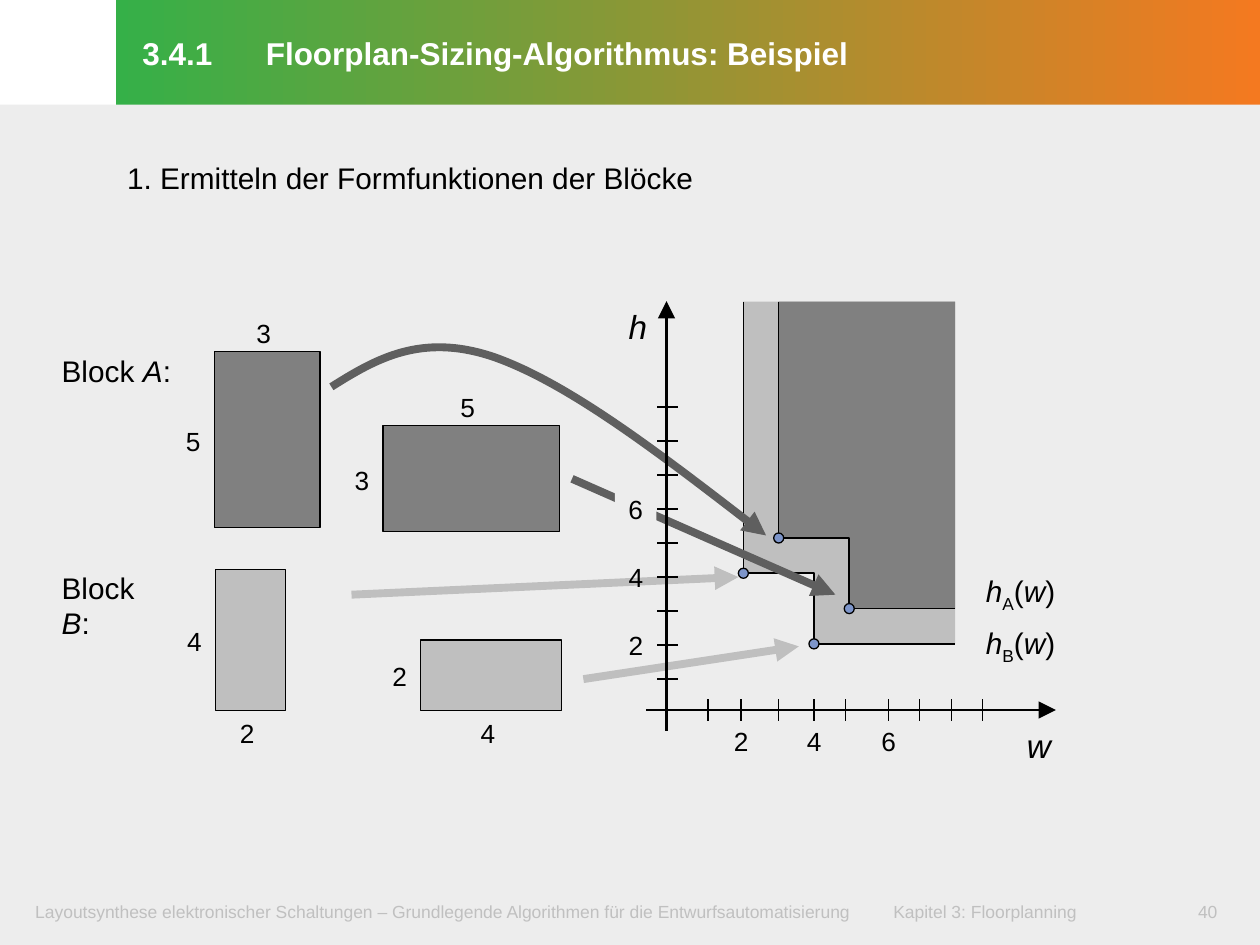
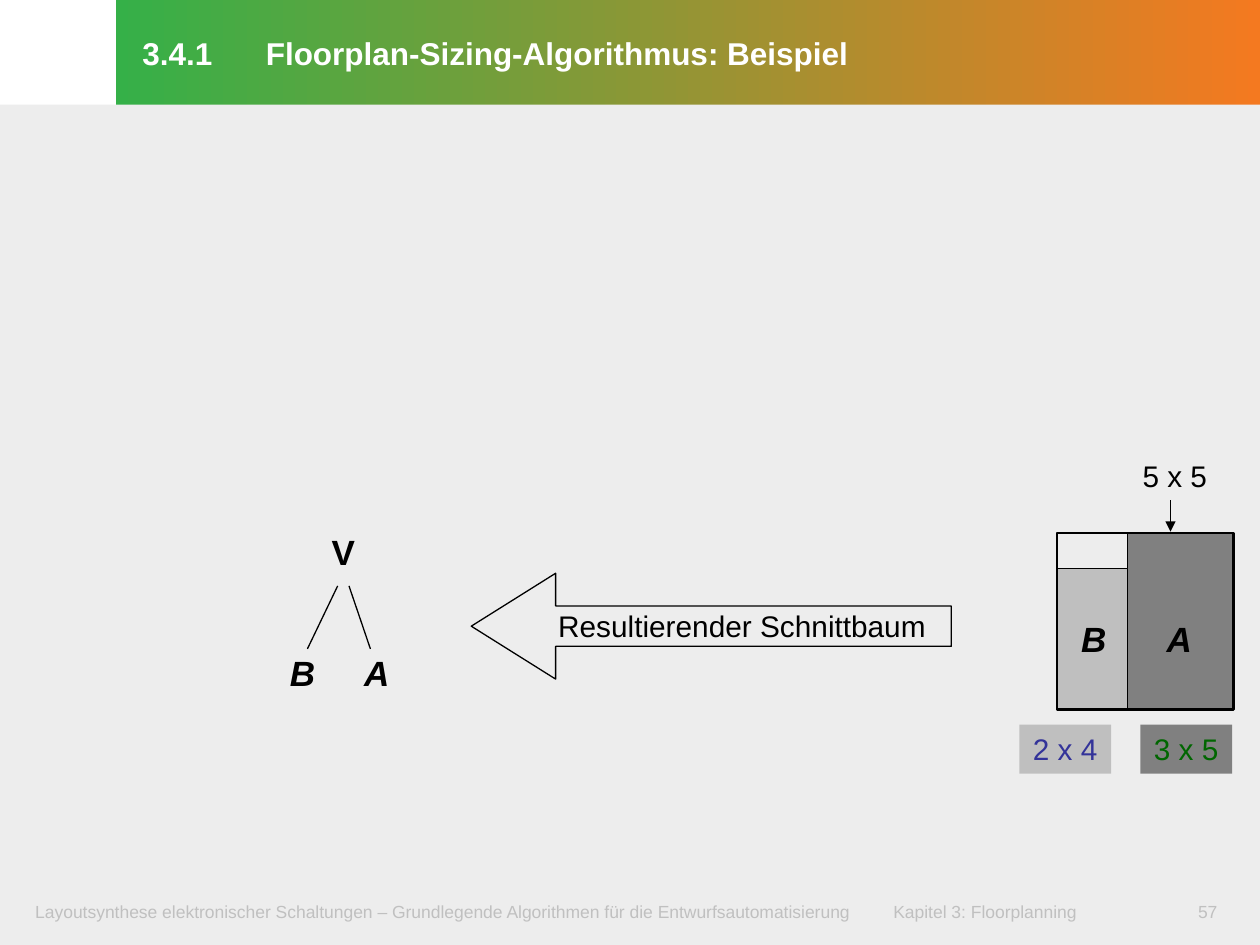
from dataclasses import dataclass
from typing import Any

from lxml import etree
from pptx import Presentation
from pptx import util as u
from pptx.dml.color import RGBColor
from pptx.enum import shapes, text
from pptx.oxml.ns import qn

COLORS = {
    "paper": "EDEDED", "footer": "C0C0C0", "white": "FFFFFF", "black": "000000",
    "green": "35B048", "orange": "F47920", "A": "808080", "B": "BFBFBF",
    "arrow_A": "5F5F5F", "dot": "7D95CA", "size_A": "006600", "size_B": "333399",
}
FONT = "Arial"
COLS, ROWS = 100, 75          # slide grid, square cells
UNIT = 2.8                    # grid cells per length unit of a block
DIGIT_W, DIGIT_H = 3.3, 3.5
TITLE = "3.4.1\tFloorplan-Sizing-Algorithmus: Beispiel"
BOOK = ("Layoutsynthese elektronischer Schaltungen – Grundlegende Algorithmen "
        "für die Entwurfsautomatisierung")
CHAPTER = "Kapitel 3: Floorplanning"

prs = Presentation()
prs.slide_width, prs.slide_height = u.Inches(10), u.Inches(7.5)
CELL = prs.slide_width / COLS


def grid(*lengths):
    return [u.Emu(round(v * CELL)) for v in lengths]


def rgb(name):
    return RGBColor.from_string(COLORS[name])


def style(sp, fill=None, line=None, width=0.63):
    sp.shadow.inherit = False
    if fill:
        sp.fill.solid()
        sp.fill.fore_color.rgb = rgb(fill)
    else:
        sp.fill.background()
    if line:
        stroke(sp, line, width)
    else:
        sp.line.fill.background()


def stroke(sp, color, width, arrow=None):
    """Colour a line; arrow is the head's size, med or lg."""
    sp.line.color.rgb = rgb(color)
    sp.line.width = u.Pt(width)
    if arrow:
        ln = sp.line._get_or_add_ln()
        etree.SubElement(ln, qn("a:tailEnd"), type="triangle", w=arrow, len=arrow)


def write(tf, runs, size, color="black", align="CENTER", wrap=False, inset=(1.1, 0.5)):
    """Fill a frame with (text, flags) runs; flags are b, i and s (subscript)."""
    tf.word_wrap = wrap
    tf.vertical_anchor = text.MSO_ANCHOR.TOP
    tf.margin_left, tf.margin_top = tf.margin_right, tf.margin_bottom = grid(*inset)
    p = tf.paragraphs[0]
    p.alignment = getattr(text.PP_ALIGN, align)
    for words, flags in [(runs, "")] if isinstance(runs, str) else runs:
        r = p.add_run()
        r.text = words
        r.font.name, r.font.size = FONT, u.Pt(size)
        r.font.color.rgb = rgb(color)
        r.font.bold, r.font.italic = "b" in flags, "i" in flags
        if "s" in flags:
            r._r.get_or_add_rPr().set("baseline", "-25000")


@dataclass
class Region:
    """Part of a slide; all positions are grid cells from its corner."""
    s: Any
    left: float = 0
    top: float = 0

    def shape(self, x, y, w, h, fill=None, line=None, width=0.63, kind="RECTANGLE"):
        sp = self.s.shapes.add_shape(getattr(shapes.MSO_SHAPE, kind),
                                     *grid(self.left + x, self.top + y, w, h))
        style(sp, fill, line, width)
        return sp

    def label(self, x, y, w, h, runs, size, fill=None, **options):
        if fill:
            sp = self.shape(x, y, w, h, fill)
        else:
            sp = self.s.shapes.add_textbox(*grid(self.left + x, self.top + y, w, h))
        write(sp.text_frame, runs, size, **options)

    def digit(self, x, y, value, fill=None):
        """Number centred on a point."""
        self.label(x - DIGIT_W / 2, y - DIGIT_H / 2, DIGIT_W, DIGIT_H, str(value), 15, fill)

    def line(self, x1, y1, x2, y2, color="black", width=0.75, arrow=None):
        sp = self.s.shapes.add_connector(
            shapes.MSO_CONNECTOR.STRAIGHT,
            *grid(self.left + x1, self.top + y1, self.left + x2, self.top + y2))
        stroke(sp, color, width, arrow)
        etree.SubElement(sp._element.spPr, qn("a:effectLst"))

    def outline(self, points, closed=False, **look):
        pts = [grid(self.left + x, self.top + y) for x, y in points]
        builder = self.s.shapes.build_freeform(*pts[0], scale=1.0)
        builder.add_line_segments(pts[1:], close=closed)
        sp = builder.convert_to_shape()
        style(sp, **look)
        return sp

    def curve(self, points, color, width):
        """Bezier arrow: a start point, then triples of control, control, end."""
        sp = self.outline(points)
        stroke(sp, color, width, "med")
        steps = list(sp._element.iter(qn("a:lnTo")))
        for i in range(0, len(steps), 3):
            bezier = etree.Element(qn("a:cubicBezTo"))
            steps[i].addprevious(bezier)
            for step in steps[i:i + 3]:
                bezier.append(step[0])
                step.getparent().remove(step)


def base_slide(number):
    s = prs.slides.add_slide(prs.slide_layouts[5])
    page = Region(s)
    page.shape(0, 8.3, COLS, ROWS - 8.3, "paper")
    for x, w, words, align in ((1.6, 68, BOOK, "LEFT"), (69.7, 20, CHAPTER, "LEFT"),
                               (92.9, 5.9, str(number), "CENTER")):
        page.label(x, 70.9, w, 3.2, words, 10, color="footer", align=align,
                   inset=(1.2, 0.6))
    title_band(s.shapes.title)
    return s


def title_band(sp):
    sp.left, sp.top, sp.width, sp.height = grid(9.2, 0, 90.8, 8.3)
    sp.fill.gradient()
    sp.fill.gradient_angle = 0
    for stop, name, position in zip(sp.fill.gradient_stops, ("green", "orange"), (0, 1)):
        stop.color.rgb, stop.position = rgb(name), position
    tf = sp.text_frame
    tf.auto_size = text.MSO_AUTO_SIZE.NONE
    p = tf.paragraphs[0]
    p.line_spacing = u.Pt(23.5)
    tabs = etree.SubElement(p._p.get_or_add_pPr(), qn("a:tabLst"))
    etree.SubElement(tabs, qn("a:tab"), pos=str(grid(9.8)[0]), algn="l")
    write(tf, [(TITLE, "b")], 18, "white", "LEFT", True)
    tf.vertical_anchor = text.MSO_ANCHOR.MIDDLE
    tf.margin_left, tf.margin_right, tf.margin_bottom = grid(2.1, 1, 0.7)


def block_variants(reg, name, name_box, variants, width_above):
    """Both orientations of a block, each with its width and height."""
    reg.label(*name_box, 3.9, [("Block ", ""), (name, "i"), (":", "")], 17,
              align="LEFT", wrap=True)
    for x, y, w, h in variants:
        reg.shape(x, y, w * UNIT, h * UNIT, name, "black")
        width_y = y - 1.45 if width_above else y + h * UNIT + 1.8
        reg.digit(x + w * UNIT / 2 - 0.3, width_y, w)
        reg.digit(x - 1.7, y + h * UNIT / 2 + 0.1, h)


def plot_point(w, h):
    return 4.6 + w * UNIT, 32.9 - h * UNIT


def shape_function(reg, name, corners):
    """Area above a staircase through two (w, h) corners, and its edge."""
    (w1, h1), (w2, h2) = corners
    right, top = 8, 11.7
    edge = [plot_point(*c) for c in ((w1, top), (w1, h1), (w2, h1), (w2, h2), (right, h2))]
    reg.outline(edge + [plot_point(right, top)], closed=True, fill=name)
    reg.outline(edge, line="black", width=1)


def corner_dots(reg, corners):
    for x, y in (plot_point(*c) for c in corners):
        reg.shape(x - 0.4, y - 0.4, 0.8, 0.8, "dot", "black", 0.75, "OVAL")


def axes(reg):
    w_ticks = [7.4, 10, 13, 15.8, 18.3, 21.7, 24.2, 26.7, 29.2]
    h_ticks = [32.8 - 2.7 * n for n in range(1, 10)]
    reg.line(4.1, 34.2, 4.1, 0.1, width=1.63, arrow="lg")
    reg.line(2.5, 32.55, 35, 32.55, width=1.63, arrow="lg")
    for x in w_ticks:
        reg.line(x, 31.7, x, 33.4)
    for y in h_ticks:
        reg.line(3.35, y, 5.05, y)
    for n in (2, 4, 6):
        reg.digit(w_ticks[n - 1], 35.05, n)
        reg.digit(1.65, h_ticks[n - 1], n, "paper" if n == 6 else None)
    reg.label(0, 0, 3.6, 4.3, [("h", "i")], 19)
    reg.label(31.6, 33.3, 4, 4.2, [("w", "i")], 19)
    for name, y in (("A", 21.2), ("B", 25.3)):
        reg.label(27.2, y, 10, 3.9,
                  [("h", "i"), (name, "s"), ("(", ""), ("w", "i"), (")", "")], 17)


def block_arrows(page):
    page.line(46.3, 53.9, 63.4, 51.3, "B", 4.5, "med")
    page.line(27.9, 47.2, 58.6, 45.8, "B", 4.5, "med")
    page.curve([(26.3, 30.7), (29.8, 28.5), (33.4, 26.4), (39.1, 28.3),
                (44.9, 30.3), (52.8, 36.3), (60.8, 42.5)], "arrow_A", 4.5)
    page.line(45.4, 38, 66.3, 47.2, "arrow_A", 4.5, "med")


def shape_functions_slide():
    s = base_slide(40)
    page, plot = Region(s), Region(s, 48.8, 23.8)
    corners = {"B": [(2, 4), (4, 2)], "A": [(3, 5), (5, 3)]}
    page.label(9.1, 12.2, 54.2, 3.8, "1. Ermitteln der Formfunktionen der Blöcke", 17,
               align="LEFT", wrap=True, inset=(1, 0.5))
    for name in corners:
        shape_function(plot, name, corners[name])
    block_arrows(page)
    corner_dots(plot, corners["A"] + corners["B"])
    axes(plot)
    block_variants(Region(s, 3.8, 24.7), "A", (0, 2.8, 11.4),
                   [(13.2, 3.2, 3, 5), (26.6, 9.1, 5, 3)], True)
    block_variants(Region(s, 3.8, 44.7), "B", (0, 0, 10.7),
                   [(13.3, 0.5, 2, 4), (29.6, 6.1, 4, 2)], False)


def letter(reg, x, y, name, flags="bi"):
    reg.label(x, y, 4.1, 4.4, [(name, flags)], 20)


def slicing_tree(reg):
    letter(reg, 3.3, 0, "V", "b")
    letter(reg, 0, 9.6, "B")
    letter(reg, 5.9, 9.6, "A")
    reg.line(4.9, 4.9, 2.5, 9.9)
    reg.line(5.8, 4.9, 7.5, 9.9)


def result_arrow(reg):
    head, end, mid, half_head, half_shaft = 6.7, 38.1, 4.2, 4.2, 1.6
    upper = [(head, -half_head), (head, -half_shaft), (end, -half_shaft)]
    lower = [(x, -y) for x, y in reversed(upper)]
    reg.outline([(x, mid + y) for x, y in [(0, 0)] + upper + lower], closed=True,
                fill="paper", line="black", width=0.75)
    reg.label(6.3, mid - half_shaft, 31.8, 2 * half_shaft, "Resultierender Schnittbaum",
              17, align="LEFT", wrap=True, inset=(0.6, 0.1))


def floorplan(reg):
    side, split = 5 * UNIT, 2 * UNIT
    reg.shape(split, 6.5, 3 * UNIT, side, "A", "black")
    reg.shape(0, 6.5 + UNIT, split, 4 * UNIT, "B", "black")
    reg.shape(0, 6.5, side, side, None, "black", 1.5)
    letter(reg, 0.8, 12.7, "B")
    letter(reg, 7.6, 12.7, "A")
    for x, y, size, fill, color in ((-3, 21.7, "2 x 4", "B", "size_B"),
                                    (6.6, 21.7, "3 x 5", "A", "size_A"),
                                    (5.7, 0, "5 x 5", "paper", "black")):
        reg.label(x, y, 7.3, 3.9, size, 17, fill, color=color)
    reg.line(9, 3.9, 9, 6.4, arrow="med")


def slicing_tree_slide():
    s = base_slide(57)
    slicing_tree(Region(s, 21.9, 41.6))
    result_arrow(Region(s, 37.4, 45.5))
    floorplan(Region(s, 83.9, 35.8))


if __name__ == "__main__":
    shape_functions_slide()
    slicing_tree_slide()
    prs.save("out.pptx")
